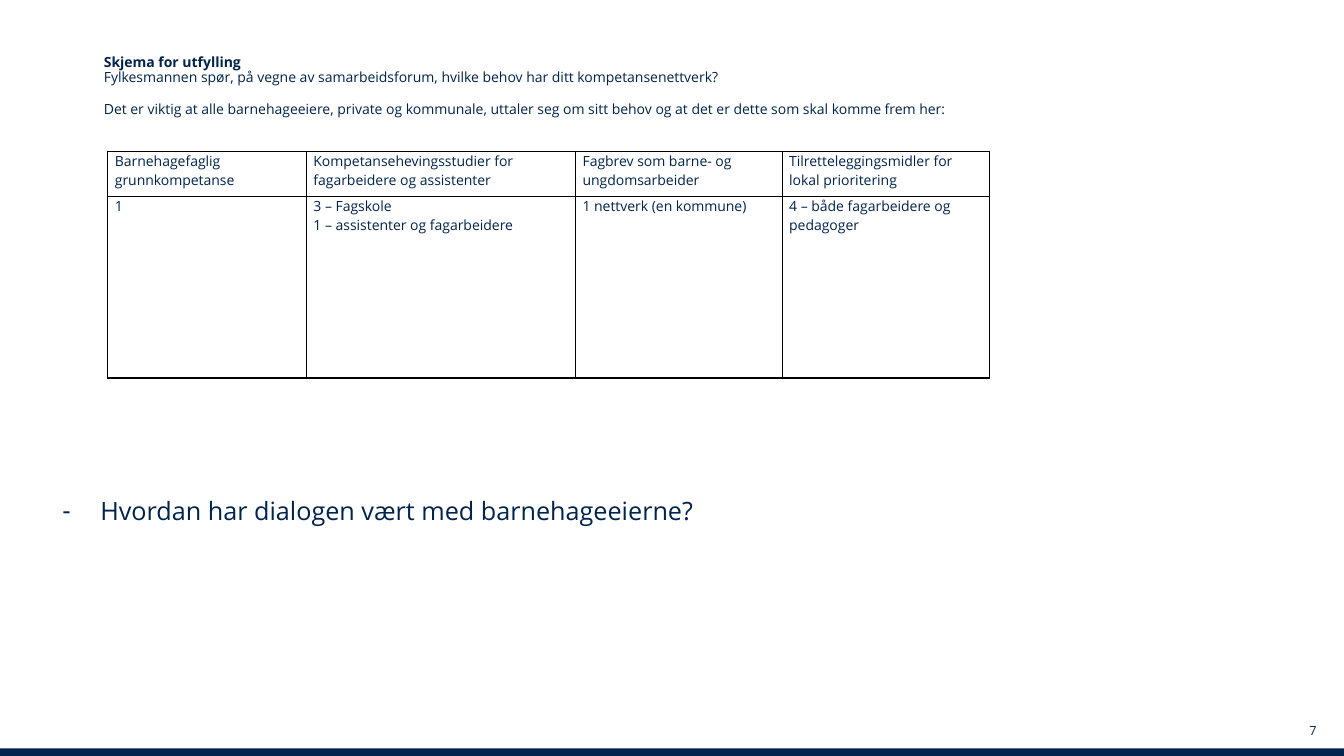
import dataclasses

import lxml.etree
import pptx
import pptx.dml.color
import pptx.enum.shapes
import pptx.enum.text
import pptx.oxml.ns
import pptx.util


@dataclasses.dataclass(frozen=True)
class Theme:
    navy: str = "00244E"
    border: str = "000000"
    typeface: str = "Open Sans"
    page_size: int = 9
    text_size: int = 10
    question_size: int = 18
    line_spacing: float = 0.9
    border_width: int = 1


class SlideBuilder:
    COLUMNS = 160
    ROWS = 90

    def __init__(self, deck, theme):
        self.deck = deck
        self.theme = theme
        self.slide = deck.slides.add_slide(deck.slide_layouts[1])

    def across(self, columns):
        return round(self.deck.slide_width * columns / self.COLUMNS)

    def down(self, rows):
        return round(self.deck.slide_height * rows / self.ROWS)

    def area(self, left, top, width, height):
        return {
            "left": self.across(left),
            "top": self.down(top),
            "width": self.across(width),
            "height": self.down(height),
        }

    def apply(self, target, formats):
        for attribute, value in formats.items():
            setattr(target, attribute, value)

    def add_text(self, paragraph, text, size, bold=False, **formats):
        self.apply(paragraph, formats)
        run = paragraph.add_run()
        run.text = text
        self.apply(run.font, {
            "name": self.theme.typeface,
            "size": pptx.util.Pt(size),
            "bold": bold,
        })
        run.font.color.rgb = pptx.dml.color.RGBColor.from_string(self.theme.navy)

    def place(self, holder, area, anchor=pptx.enum.text.MSO_ANCHOR.TOP):
        self.apply(holder, self.area(*area))
        self.apply(holder.text_frame, {
            "word_wrap": True,
            "auto_size": pptx.enum.text.MSO_AUTO_SIZE.NONE,
            "vertical_anchor": anchor,
        })
        return holder.text_frame

    def intro(self, area, lines):
        frame = self.place(self.slide.shapes.title, area)
        for index, (text, formats) in enumerate(lines):
            paragraph = frame.add_paragraph() if index else frame.paragraphs[0]
            self.add_text(
                paragraph, text, self.theme.text_size,
                alignment=pptx.enum.text.PP_ALIGN.LEFT,
                line_spacing=self.theme.line_spacing, **formats,
            )

    def question(self, area, text, indent):
        paragraph = self.place(self.slide.placeholders[1], area).paragraphs[0]
        properties = paragraph._p.get_or_add_pPr()
        properties.set("marL", str(self.across(indent)))
        properties.set("indent", str(-self.across(indent)))
        dash = lxml.etree.SubElement(properties, pptx.oxml.ns.qn("a:buChar"))
        dash.set("char", "-")
        self.add_text(
            paragraph, text, self.theme.question_size,
            line_spacing=self.theme.line_spacing, space_before=pptx.util.Pt(0),
        )

    def outline(self, cell):
        properties = cell._tc.get_or_add_tcPr()
        for index, side in enumerate(("lnL", "lnR", "lnT", "lnB")):
            line = lxml.etree.Element(pptx.oxml.ns.qn("a:" + side))
            line.set("w", str(pptx.util.Pt(self.theme.border_width)))
            fill = lxml.etree.SubElement(line, pptx.oxml.ns.qn("a:solidFill"))
            color = lxml.etree.SubElement(fill, pptx.oxml.ns.qn("a:srgbClr"))
            color.set("val", self.theme.border)
            properties.insert(index, line)

    def table(self, left, top, widths, heights, content):
        area = self.area(left, top, sum(widths), sum(heights))
        needs = self.slide.shapes.add_table(len(heights), len(widths), **area).table
        self.apply(needs, {"first_row": False, "horz_banding": False})
        for column, width in zip(needs.columns, widths):
            column.width = self.across(width)
        for row, height, entries in zip(needs.rows, heights, content):
            row.height = self.down(height)
            for cell, entry in zip(row.cells, entries):
                self.apply(cell, {
                    "margin_left": pptx.util.Inches(0.07),
                    "margin_right": pptx.util.Inches(0.07),
                    "margin_top": 0,
                    "margin_bottom": 0,
                })
                cell.fill.background()
                self.outline(cell)
                for index, text in enumerate(entry.split("\n")):
                    frame = cell.text_frame
                    paragraph = frame.add_paragraph() if index else frame.paragraphs[0]
                    self.add_text(paragraph, text, self.theme.text_size)

    def bar(self, area):
        footer = self.slide.shapes.add_shape(
            pptx.enum.shapes.MSO_SHAPE.RECTANGLE, **self.area(*area)
        )
        footer.shadow.inherit = False
        footer.fill.solid()
        footer.fill.fore_color.rgb = pptx.dml.color.RGBColor.from_string(self.theme.navy)
        footer.line.fill.background()

    def page_number(self, area, number):
        page = self.slide.shapes.add_textbox(**self.area(*area))
        frame = self.place(page, area, pptx.enum.text.MSO_ANCHOR.MIDDLE)
        self.add_text(
            frame.paragraphs[0], number, self.theme.page_size,
            alignment=pptx.enum.text.PP_ALIGN.RIGHT,
        )


def main():
    deck = pptx.Presentation()
    deck.slide_width = pptx.util.Inches(13.33)
    deck.slide_height = pptx.util.Inches(7.5)
    builder = SlideBuilder(deck, Theme())

    builder.bar((0, 89.1, 160, 0.9))
    builder.page_number((151.44, 85.44, 6.48, 3.12), "7")
    builder.intro((11.16, 6, 108.84, 9.24), [
        ("Skjema for utfylling", {"bold": True}),
        ("Fylkesmannen spør, på vegne av samarbeidsforum, hvilke behov har ditt "
         "kompetansenettverk?", {}),
        ("Det er viktig at alle barnehageeiere, private og kommunale, uttaler seg om "
         "sitt behov og at det er dette som skal komme frem her:",
         {"space_before": pptx.util.Pt(12)}),
    ])
    builder.table(12.84, 18, (23.64, 32.04, 24.6, 24.72), (5.4, 21.6), [
        ("Barnehagefaglig grunnkompetanse",
         "Kompetansehevingsstudier for fagarbeidere og assistenter",
         "Fagbrev som barne- og ungdomsarbeider",
         "Tilretteleggingsmidler for lokal prioritering"),
        ("1",
         "3 – Fagskole\n1 – assistenter og fagarbeidere",
         "1 nettverk (en kommune)",
         "4 – både fagarbeidere og pedagoger"),
    ])
    builder.question(
        (6.24, 58.8, 138.72, 8.4), "Hvordan har dialogen vært med barnehageeierne?", 4.5
    )
    deck.save("out.pptx")


if __name__ == "__main__":
    main()
